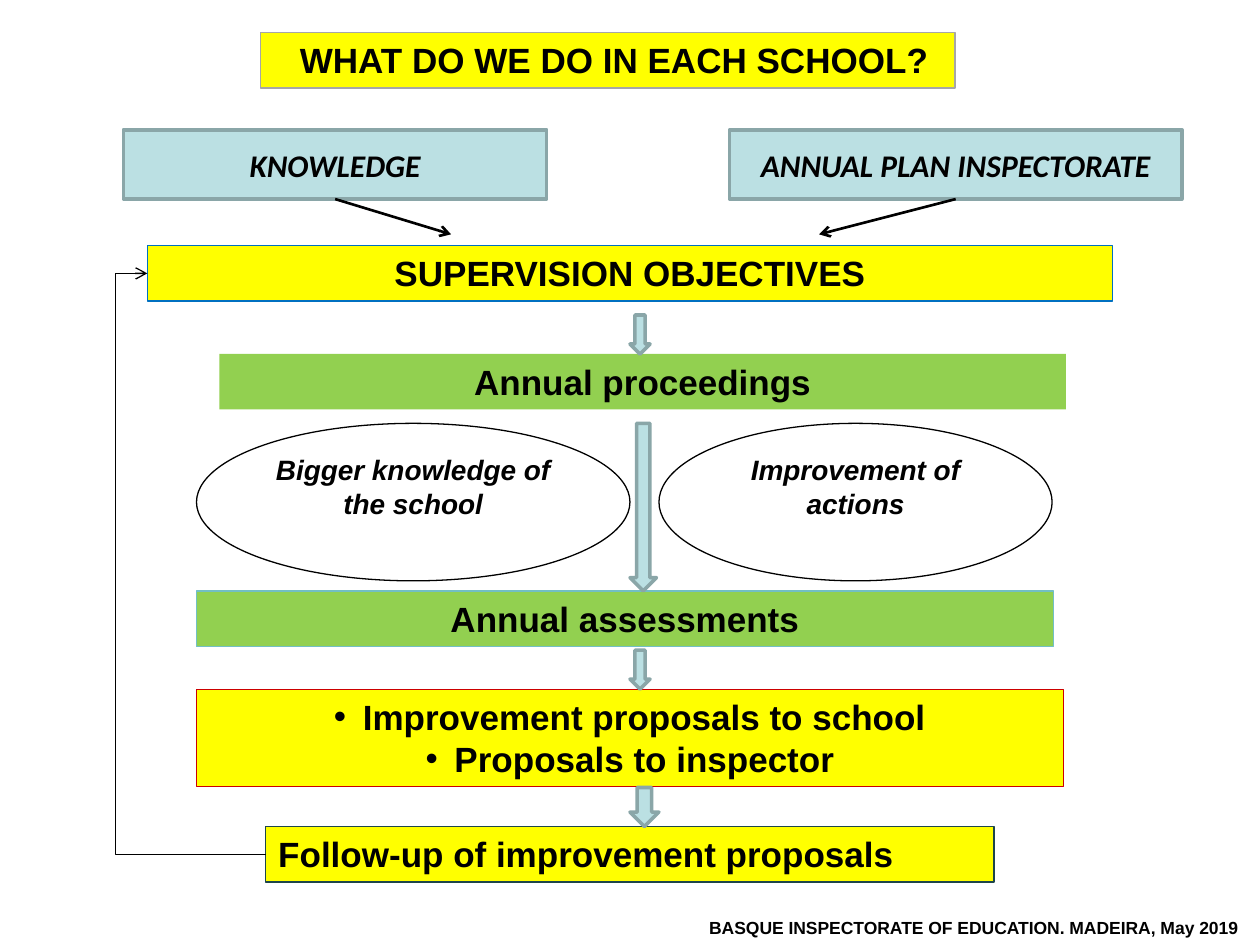
from dataclasses import dataclass
from typing import Optional

from lxml.etree import SubElement
from pptx import Presentation
from pptx.dml.color import RGBColor
from pptx.enum.shapes import MSO_CONNECTOR, MSO_SHAPE
from pptx.enum.text import MSO_ANCHOR, PP_ALIGN
from pptx.oxml.ns import qn
from pptx.util import Inches, Pt


@dataclass(frozen=True)
class Theme:
    """Colours, fonts and type sizes of the slide."""
    black: str = "000000"
    white: str = "FFFFFF"
    yellow: str = "FFFF00"
    green: str = "92D050"
    aqua: str = "BBE0E3"
    aqua_edge: str = "8AA6A8"
    font: str = "Arial"
    source_font: str = "Calibri"
    step_size: int = 20
    source_size: int = 18
    result_size: int = 16
    footer_size: int = 10


@dataclass(frozen=True)
class Box:
    """A horizontal step bar."""
    text: str
    left: float
    top: float
    width: float
    fill: str
    line: Optional[str]
    height: float = 0.44
    align: PP_ALIGN = PP_ALIGN.CENTER
    inset: float = 0.1
    bullet: bool = False


@dataclass(frozen=True)
class Oval:
    """A result of the proceedings."""
    text: str
    left: float
    width: float


@dataclass(frozen=True)
class Source:
    """An input to the objectives and the tip of its arrow."""
    text: str
    left: float
    width: float
    tip: float


@dataclass(frozen=True)
class DownArrow:
    """A block arrow between two steps."""
    top: float
    width: float = 0.16
    height: float = 0.31


THEME = Theme()
TITLE = Box("WHAT DO WE DO IN EACH SCHOOL?", 2.07, 0.26, 5.51, THEME.yellow, "A6A6A6",
            align=PP_ALIGN.LEFT, inset=0.31)
OBJECTIVES = Box("SUPERVISION OBJECTIVES", 1.17, 1.95, 7.66, THEME.yellow, "0070C0")
FOLLOW_UP = Box("Follow-up of improvement proposals", 2.11, 6.56, 5.78, THEME.yellow,
                "1E4649", align=PP_ALIGN.LEFT)
STEPS = [
    Box("Annual proceedings", 1.74, 2.81, 6.72, THEME.green, None),
    Box("Annual assessments", 1.56, 4.69, 6.8, THEME.green, "72BFC5"),
    Box("Improvement proposals to school\nProposals to inspector", 1.56, 5.47, 6.88,
        THEME.yellow, "CC0000", height=0.77, bullet=True),
]
OVALS = [Oval("Improvement of actions", 5.23, 3.12),
         Oval("Bigger knowledge of the school", 1.56, 3.44)]
SOURCES = [Source("KNOWLEDGE", 0.98, 3.36, 3.58),
           Source("ANNUAL PLAN INSPECTORATE", 5.79, 3.59, 6.5)]
DOWN_ARROWS = [DownArrow(2.5), DownArrow(3.36, 0.21, 1.33), DownArrow(5.16),
               DownArrow(6.25, 0.23)]


def add_bullet(p, indent: float = 0.23):
    pPr = p._p.get_or_add_pPr()
    pPr.set("marL", str(Inches(indent)))
    pPr.set("indent", str(-Inches(indent)))
    SubElement(pPr, qn("a:buFont")).set("typeface", THEME.font)
    SubElement(pPr, qn("a:buChar")).set("char", "•")


def write(sp, text: str, *, size: int, font: str = THEME.font, italic: bool = False,
          align: PP_ALIGN = PP_ALIGN.CENTER, anchor: MSO_ANCHOR = MSO_ANCHOR.TOP,
          inset: float = 0.1, bullet: bool = False, wrap: bool = True):
    tf = sp.text_frame
    tf.word_wrap = wrap
    tf.vertical_anchor = anchor
    tf.margin_left = Inches(inset)
    for i, line in enumerate(text.split("\n")):
        p = tf.add_paragraph() if i else tf.paragraphs[0]
        p.alignment = align
        if bullet:
            add_bullet(p)
        r = p.add_run()
        r.text = line
        r.font.name, r.font.size = font, Pt(size)
        r.font.bold, r.font.italic = True, italic
        r.font.color.rgb = RGBColor.from_string(THEME.black)


def add_shape(s, kind: MSO_SHAPE, left: float, top: float, width: float, height: float,
              fill: str, line: Optional[str], weight: float = 0.75):
    sp = s.shapes.add_shape(kind, Inches(left), Inches(top), Inches(width), Inches(height))
    sp.shadow.inherit = False
    sp.fill.solid()
    sp.fill.fore_color.rgb = RGBColor.from_string(fill)
    if line:
        sp.line.color.rgb = RGBColor.from_string(line)
        sp.line.width = Pt(weight)
    else:
        sp.line.fill.background()
    return sp


def add_box(s, box: Box):
    sp = add_shape(s, MSO_SHAPE.RECTANGLE, box.left, box.top, box.width, box.height,
                   box.fill, box.line)
    write(sp, box.text, size=THEME.step_size, align=box.align, inset=box.inset,
          bullet=box.bullet)
    return sp


def add_oval(s, oval: Oval):
    sp = add_shape(s, MSO_SHAPE.OVAL, oval.left, 3.36, oval.width, 1.25,
                   THEME.white, THEME.black)
    write(sp, oval.text, size=THEME.result_size, italic=True)


def add_arrow(s, kind: MSO_CONNECTOR, start, side: int, tip_x: float, tip_y: float,
              weight: float):
    cn = s.shapes.add_connector(kind, start.left, start.top, Inches(tip_x), Inches(tip_y))
    cn.begin_connect(start, side)
    cn.line.color.rgb = RGBColor.from_string(THEME.black)
    cn.line.width = Pt(weight)
    SubElement(cn.line._get_or_add_ln(), qn("a:tailEnd")).set("type", "arrow")
    SubElement(cn._element.spPr, qn("a:effectLst"))
    return cn


def add_source(s, source: Source):
    sp = add_shape(s, MSO_SHAPE.RECTANGLE, source.left, 1.03, source.width, 0.55,
                   THEME.aqua, THEME.aqua_edge, 2)
    write(sp, source.text, size=THEME.source_size, font=THEME.source_font, italic=True,
          anchor=MSO_ANCHOR.MIDDLE)
    add_arrow(s, MSO_CONNECTOR.STRAIGHT, sp, 2, source.tip, 1.86, 1.5)


def add_feedback(s, start, end):
    cn = add_arrow(s, MSO_CONNECTOR.ELBOW, start, 1, OBJECTIVES.left, 2.17, 0.75)
    cn.end_connect(end, 1)
    guides = cn._element.spPr.find(qn("a:prstGeom")).get_or_add_avLst()
    gd = SubElement(guides, qn("a:gd"))
    gd.set("name", "adj1")
    gd.set("fmla", "val 126700")


def main():
    """Build the school supervision flow slide."""
    prs = Presentation()
    prs.slide_width, prs.slide_height = Inches(10), Inches(7.5)
    s = prs.slides.add_slide(prs.slide_layouts[6])
    footer = s.shapes.add_textbox(Inches(5.53), Inches(7.23), Inches(4.47), Inches(0.27))
    write(footer, "BASQUE INSPECTORATE OF EDUCATION. MADEIRA, May 2019",
          size=THEME.footer_size, align=PP_ALIGN.LEFT, wrap=False)
    follow_up = add_box(s, FOLLOW_UP)
    for source in SOURCES:
        add_source(s, source)
    for oval in OVALS:
        add_oval(s, oval)
    for step in STEPS:
        add_box(s, step)
    for arrow in DOWN_ARROWS:
        add_shape(s, MSO_SHAPE.DOWN_ARROW, 5, arrow.top, arrow.width, arrow.height,
                  THEME.aqua, THEME.aqua_edge, 2)
    objectives = add_box(s, OBJECTIVES)
    add_feedback(s, follow_up, objectives)
    add_box(s, TITLE)
    prs.save("out.pptx")


if __name__ == "__main__":
    main()
